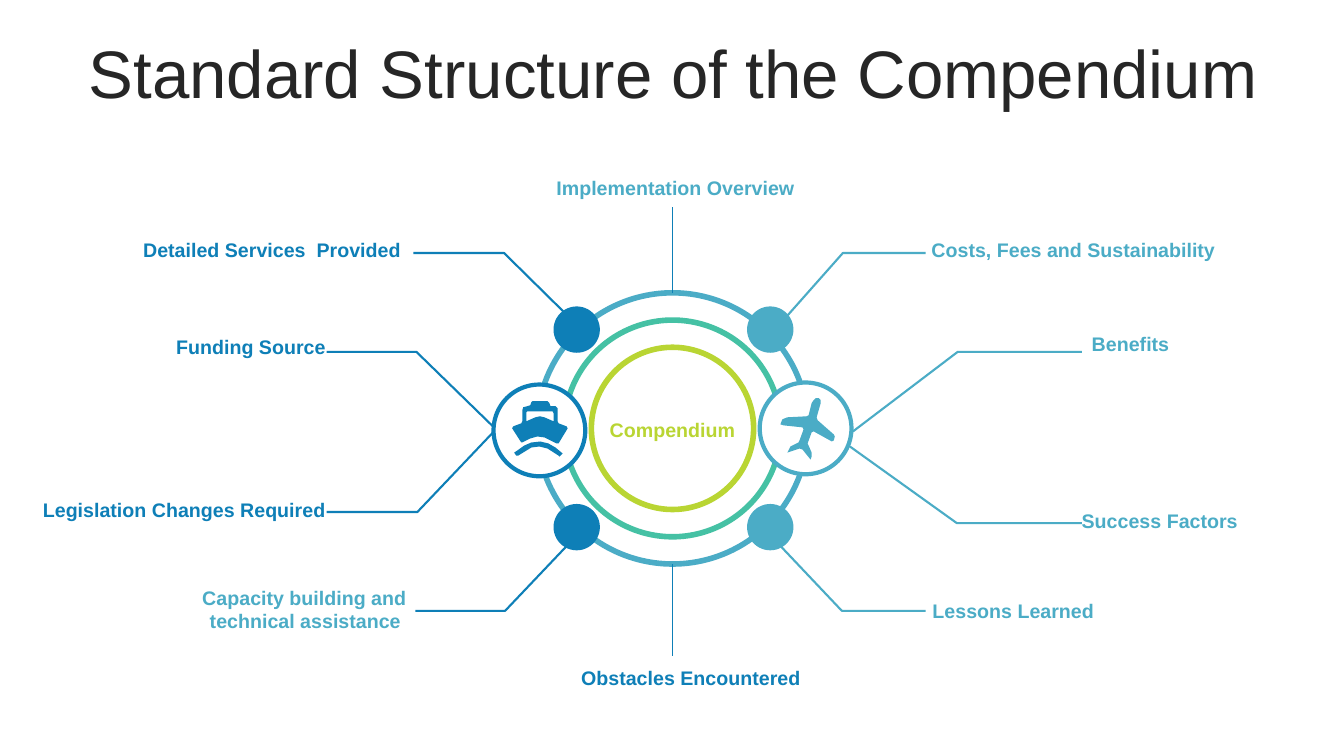
from typing import NamedTuple

from lxml import etree
from pptx import Presentation
from pptx.dml.color import RGBColor
from pptx.enum.shapes import MSO_CONNECTOR as Conn, MSO_SHAPE as Shape
from pptx.enum.text import MSO_ANCHOR as Anchor, PP_ALIGN as Align
from pptx.oxml.ns import qn
from pptx.util import Inches, Pt

BLUE, SKY, TEAL, LIME, WHITE, DARK = "0E7FB7", "4BACC6", "45C1A4", "B9D533", "FFFFFF", "262626"
Point = tuple[float, float]


class Circle(NamedTuple):
    cx: float
    cy: float
    size: float
    fill: str | None = None
    line: str | None = None
    width: float = 0


class Leader(NamedTuple):
    points: list[Point]
    color: str


class Label(NamedTuple):
    text: str
    left: float
    top: float
    width: float
    color: str
    align: Align = Align.LEFT
    height: float = 0.34
    wrap: bool = True


CX, CY = 6.67, 4.25
DISC_DX, DISC_DY = 0.96, 0.98

CIRCLES = [
    Circle(CX, CY, 2.69, line=SKY, width=4),
    Circle(CX, CY, 2.15, line=TEAL, width=4),
    Circle(CX, CY, 1.61, line=LIME, width=4),
    *(Circle(CX + sx * DISC_DX + 0.01, CY + sy * DISC_DY, 0.46, fill=color)
      for sx, color in ((1, SKY), (-1, BLUE)) for sy in (-1, 1)),
    Circle(5.35, 4.27, 0.91, WHITE, BLUE, 3),
    Circle(7.99, 4.25, 0.91, WHITE, SKY, 3),
]

LEADERS = [
    Leader([(5.76, 3.26), (5, 2.51), (4.1, 2.51)], BLUE),
    Leader([(4.9, 4.24), (4.13, 3.49), (3.24, 3.49)], BLUE),
    Leader([(4.9, 4.28), (4.14, 5.08), (3.24, 5.08)], BLUE),
    Leader([(5.76, 5.27), (5.01, 6.06), (4.12, 6.06)], BLUE),
    Leader([(7.66, 3.3), (8.36, 2.51), (9.18, 2.51)], SKY),
    Leader([(8.46, 4.28), (9.5, 3.49), (10.73, 3.49)], SKY),
    Leader([(8.43, 4.43), (9.49, 5.19), (10.73, 5.19)], SKY),
    Leader([(7.64, 5.31), (8.35, 6.06), (9.18, 6.06)], SKY),
]

LABELS = [
    Label("Implementation Overview", 5.42, 1.69, 2.59, SKY, wrap=False),
    Label("Costs, Fees and Sustainability", 9.14, 2.31, 3.14, SKY),
    Label("Benefits", 10.73, 3.24, 2.5, SKY),
    Label("Success Factors", 10.63, 5, 2.7, SKY),
    Label("Lessons Learned", 9.15, 5.89, 2.91, SKY),
    Label("Obstacles Encountered", 5.64, 6.55, 2.4, BLUE, Align.RIGHT, wrap=False),
    Label("Capacity building and technical assistance ", 1.53, 5.76, 2.6, SKY, Align.RIGHT, 0.57),
    Label("Legislation Changes Required", 0.06, 4.89, 3.27, BLUE, Align.RIGHT),
    Label("Funding Source", 1.31, 3.27, 2.02, BLUE, Align.RIGHT),
    Label("Detailed Services  Provided ", 0.77, 2.31, 3.36, BLUE, Align.RIGHT),
    Label("Compendium", 5.93, 4.09, 1.48, LIME, Align.CENTER),
]

PLANE = [[
    (8.04, 4.56), (7.96, 4.46), (7.93, 4.45), (7.81, 4.49), (7.84, 4.43), (7.92, 4.39),
    (7.93, 4.37), (7.97, 4.26), (7.96, 4.24), (7.77, 4.22), (7.74, 4.21), (7.76, 4.16),
    (7.81, 4.14), (8, 4.13), (8.02, 4.12), (8.05, 4), (8.07, 3.97), (8.09, 3.95),
    (8.12, 3.95), (8.14, 3.97), (8.14, 4), (8.1, 4.14), (8.11, 4.17), (8.27, 4.31),
    (8.28, 4.33), (8.27, 4.37), (8.25, 4.38), (8.07, 4.28), (8.05, 4.29), (8.01, 4.4),
    (8.02, 4.42), (8.05, 4.49), (8.05, 4.53),
]]

SHIP_WAVE = [
    (5.36, 4.38), (5.44, 4.4), (5.51, 4.44), (5.57, 4.49), (5.58, 4.5), (5.55, 4.53),
    (5.54, 4.52), (5.43, 4.45), (5.35, 4.43), (5.27, 4.44), (5.14, 4.52), (5.12, 4.52),
    (5.1, 4.49), (5.13, 4.47), (5.2, 4.42), (5.27, 4.39),
]
SHIP_WINDOW = [
    (5.23, 4.08), (5.22, 4.09), (5.22, 4.18), (5.31, 4.14), (5.355, 4.13), (5.4, 4.14),
    (5.49, 4.18), (5.49, 4.1), (5.48, 4.08),
]
SHIP_HULL = [
    (5.28, 3.98), (5.43, 3.98), (5.45, 4), (5.46, 4.03), (5.51, 4.03), (5.53, 4.05),
    (5.53, 4.18), (5.54, 4.2), (5.62, 4.23), (5.63, 4.25), (5.54, 4.4), (5.52, 4.4),
    (5.4, 4.34), (5.33, 4.33), (5.26, 4.35), (5.18, 4.39), (5.17, 4.39), (5.08, 4.25),
    (5.09, 4.23), (5.17, 4.2), (5.18, 4.18), (5.18, 4.07), (5.19, 4.04), (5.23, 4.03),
    (5.26, 4.02), (5.27, 3.99),
]
SHIP = [SHIP_WAVE, SHIP_WINDOW, SHIP_HULL]


def rgb(color: str) -> RGBColor:
    return RGBColor.from_string(color)


def style(sp, fill: str | None = None, line: str | None = None, width: float = 0) -> None:
    sp.shadow.inherit = False
    if fill:
        sp.fill.solid()
        sp.fill.fore_color.rgb = rgb(fill)
    else:
        sp.fill.background()
    if line:
        sp.line.color.rgb = rgb(line)
        sp.line.width = Pt(width)
    else:
        sp.line.fill.background()


def add_circle(s, c: Circle) -> None:
    left, top = c.cx - c.size / 2, c.cy - c.size / 2
    sp = s.shapes.add_shape(Shape.OVAL, Inches(left), Inches(top), Inches(c.size), Inches(c.size))
    style(sp, c.fill, c.line, c.width)


def add_outline(s, contours: list[list[Point]], close: bool, **look) -> None:
    paths = [[(Inches(x), Inches(y)) for x, y in contour] for contour in contours]
    builder = s.shapes.build_freeform(*paths[0][0])
    for i, points in enumerate(paths):
        if i:
            builder.move_to(*points[0])
        builder.add_line_segments(points[1:], close=close)
    style(builder.convert_to_shape(), **look)


def add_spoke(s, start: float, end: float) -> None:
    cn = s.shapes.add_connector(Conn.STRAIGHT, Inches(CX), Inches(start), Inches(CX), Inches(end))
    cn.line.color.rgb = rgb(BLUE)
    cn.line.width = Pt(0.5)
    etree.SubElement(cn._element.spPr, qn("a:effectLst"))


def add_text(s, text: str, left: float, top: float, width: float, height: float, *,
             color: str, size: float = 14, bold: bool = True, align: Align = Align.LEFT,
             wrap: bool = True, spacing: float = 1, before: float = 0) -> None:
    box = s.shapes.add_textbox(Inches(left), Inches(top), Inches(width), Inches(height))
    tf = box.text_frame
    tf.word_wrap = wrap
    tf.vertical_anchor = Anchor.MIDDLE
    p = tf.paragraphs[0]
    p.alignment, p.line_spacing, p.space_before = align, spacing, Pt(before)
    r = p.add_run()
    r.text = text
    r.font.name, r.font.size, r.font.bold = "Arial", Pt(size), bold
    r.font.color.rgb = rgb(color)


def main() -> None:
    prs = Presentation()
    prs.slide_width, prs.slide_height = Inches(13.33), Inches(7.5)
    s = prs.slides.add_slide(prs.slide_layouts[6])

    # Title
    add_text(s, "Standard Structure of the Compendium", 0.35, 0.37, 12.66, 0.79, color=DARK,
             size=48, bold=False, align=Align.CENTER, spacing=0.9, before=10)

    # Leader lines, then the hub over their inner ends
    for leader in LEADERS:
        add_outline(s, [leader.points], False, line=leader.color, width=1.5)
    for circle in CIRCLES:
        add_circle(s, circle)
    add_spoke(s, 2.91, 2.05)
    add_spoke(s, 5.6, 6.51)

    # Transport icons
    add_outline(s, PLANE, True, fill=SKY)
    add_outline(s, SHIP, True, fill=BLUE)

    # Labels
    for b in LABELS:
        add_text(s, b.text, b.left, b.top, b.width, b.height,
                 color=b.color, align=b.align, wrap=b.wrap)

    prs.save("out.pptx")


if __name__ == "__main__":
    main()
